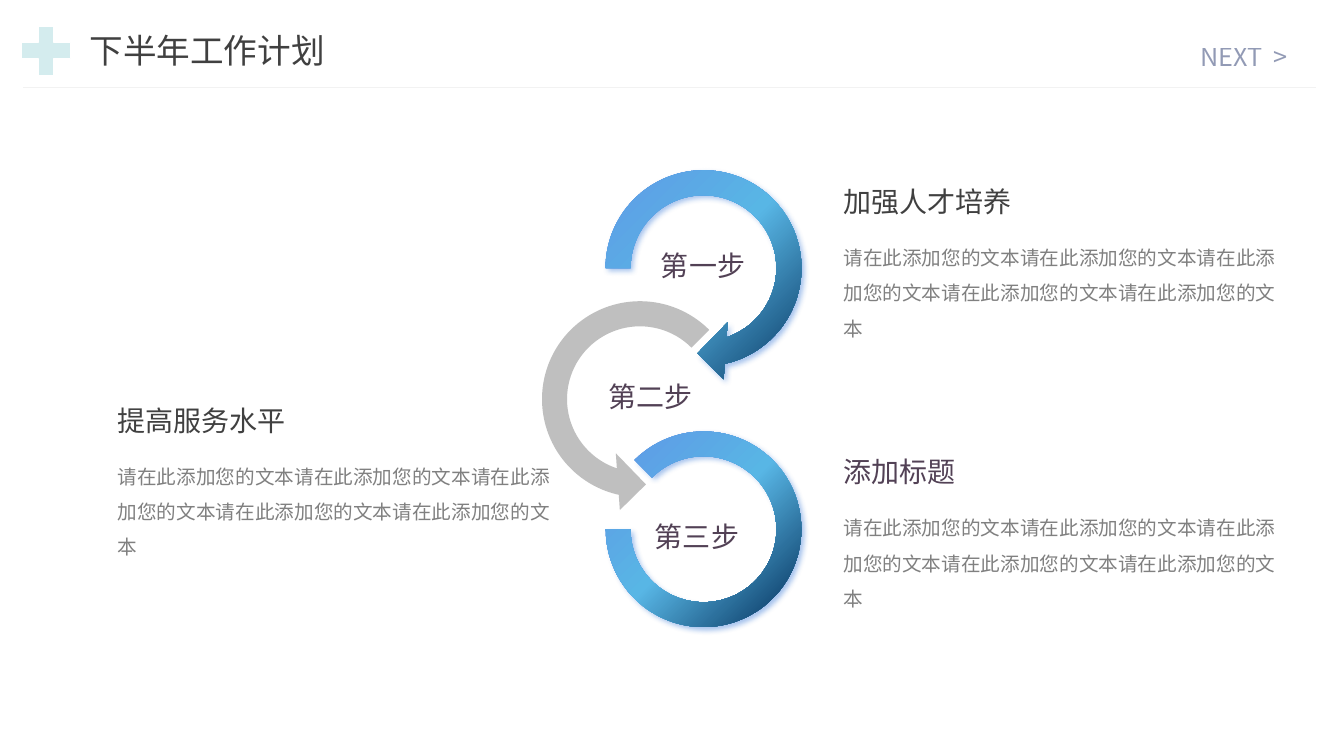
import copy

import pptx
import pptx.dml.color
import pptx.enum.shapes
import pptx.enum.text
import pptx.oxml
import pptx.oxml.ns
import pptx.util
from lxml import etree

Pt = pptx.util.Pt
RGB = pptx.dml.color.RGBColor.from_string
qn = pptx.oxml.ns.qn
SHAPE = pptx.enum.shapes.MSO_SHAPE
ANCHOR = pptx.enum.text.MSO_ANCHOR
ALIGN = pptx.enum.text.PP_ALIGN

FONT = "Noto Sans CJK SC"
COLORS = {
    "dark": "404040", "plum": "524155", "body": "808080", "next": "324274",
    "plus": "D4ECEE", "white": "FFFFFF", "rule": "F2F2F2", "grey": "BFBFBF",
    "sky": "6096E6", "cyan": "58B6E5", "navy": "012B55", "shadow": "2169D3",
}

deck = pptx.Presentation()
deck.slide_width, deck.slide_height = Pt(960), Pt(540)
slide = deck.slides.add_slide(deck.slide_layouts[6])


def add_text(text, left, top, width, height, size, color, anchor=ANCHOR.TOP, spacing=None):
    box = slide.shapes.add_textbox(Pt(left), Pt(top), Pt(width), Pt(height))
    box.text_frame.word_wrap = True
    box.text_frame.vertical_anchor = anchor
    para = box.text_frame.paragraphs[0]
    para.line_spacing = spacing
    span = para.add_run()
    span.text = text
    span.font.size = Pt(size)
    span.font.name = FONT
    span.font.color.rgb = RGB(COLORS[color])
    etree.SubElement(span.font._element, qn("a:ea"), typeface=FONT)
    return box


def add_plain_shape(kind, left, top, size):
    """Add a square-framed shape without shadow or outline."""
    shape = slide.shapes.add_shape(kind, Pt(left), Pt(top), Pt(size), Pt(size))
    shape.shadow.inherit = False
    shape.line.fill.background()
    return shape


# Header
next_box = add_text("NEXT  >", 850.3, 2.9, 133.2, 74.9, 18, "next", ANCHOR.MIDDLE)
next_color = next_box._element.find(".//" + qn("a:srgbClr"))
etree.SubElement(next_color, qn("a:alpha"), val="53000")

add_text("下半年工作计划", 56.9, 17.3, 195.8, 37.4, 24, "dark", ANCHOR.MIDDLE)

plus = add_plain_shape(SHAPE.MATH_PLUS, 8.8, 12.1, 48.2)
plus.fill.solid()
plus.fill.fore_color.rgb = RGB(COLORS["plus"])
plus.line.color.rgb = RGB(COLORS["white"])
plus.line.width = Pt(1)

rule = slide.shapes.add_connector(
    pptx.enum.shapes.MSO_CONNECTOR.STRAIGHT, Pt(16.6), Pt(62.1), Pt(940.3), Pt(62.1))
rule.line.color.rgb = RGB(COLORS["rule"])
rule.line.width = Pt(0.5)
etree.SubElement(rule._element.spPr, qn("a:effectLst"))

# Winding ring of arrows; a blue part has a gradient and a shadow
rings = [
    (SHAPE.CIRCULAR_ARROW, 421.2, 110.2, 162.7, (0.11, 11.423, 45, 108, 0.125), True),
    (SHAPE.LEFT_CIRCULAR_ARROW, 375.8, 203.8, 162.7, (0.11, 11.423, 63, 189, 0.125), False),
    (SHAPE.BLOCK_ARC, 432.7, 308.2, 139.7, (135, 108, 0.127), True),
]
for kind, left, top, size, adjustments, is_blue in rings:
    ring = add_plain_shape(kind, left, top, size)
    for index, value in enumerate(adjustments):
        ring.adjustments[index] = value
    if not is_blue:
        ring.fill.solid()
        ring.fill.fore_color.rgb = RGB(COLORS["grey"])
        continue
    ring.fill.gradient()
    ring.fill.gradient_angle = 315
    stop_list = ring._element.spPr.find(".//" + qn("a:gsLst"))
    stop_list.append(copy.deepcopy(stop_list[0]))
    for stop, position, color in zip(ring.fill.gradient_stops, (0, 0.5, 1), ("sky", "cyan", "navy")):
        stop.position = position
        stop.color.rgb = RGB(COLORS[color])
    effects = ring._element.spPr.find(qn("a:effectLst"))
    shadow = etree.SubElement(
        effects, qn("a:outerShdw"), blurRad=str(Pt(4)), dist=str(Pt(3)),
        dir="2700000", algn="tl", rotWithShape="0")
    shadow_color = etree.SubElement(shadow, qn("a:srgbClr"), val=COLORS["shadow"])
    etree.SubElement(shadow_color, qn("a:alpha"), val="40000")

for label, left, top in [("第一步", 457.2, 168.5), ("第二步", 419.8, 262.1), ("第三步", 452.9, 362.2)]:
    box = add_text(label, left, top, 90, 45.4, 20, "plum", ANCHOR.MIDDLE, 0.9)
    frame = box.text_frame
    frame.margin_left = frame.margin_right = frame.margin_top = frame.margin_bottom = Pt(2.2)
    frame.paragraphs[0].alignment = ALIGN.CENTER

# Heading with description for each step
description = "请在此添加您的文本" * 5
for heading, left, top, color in [
    ("加强人才培养", 595.4, 128.2, "dark"),
    ("添加标题", 595.4, 321.4, "plum"),
    ("提高服务水平", 77, 284.4, "dark"),
]:
    add_text(heading, left, top, 213.1, 31.7, 20, color)
    add_text(description, left, top + 35.5, 325.4, 83.5, 14, "body", spacing=1.5)

deck.save("out.pptx")
